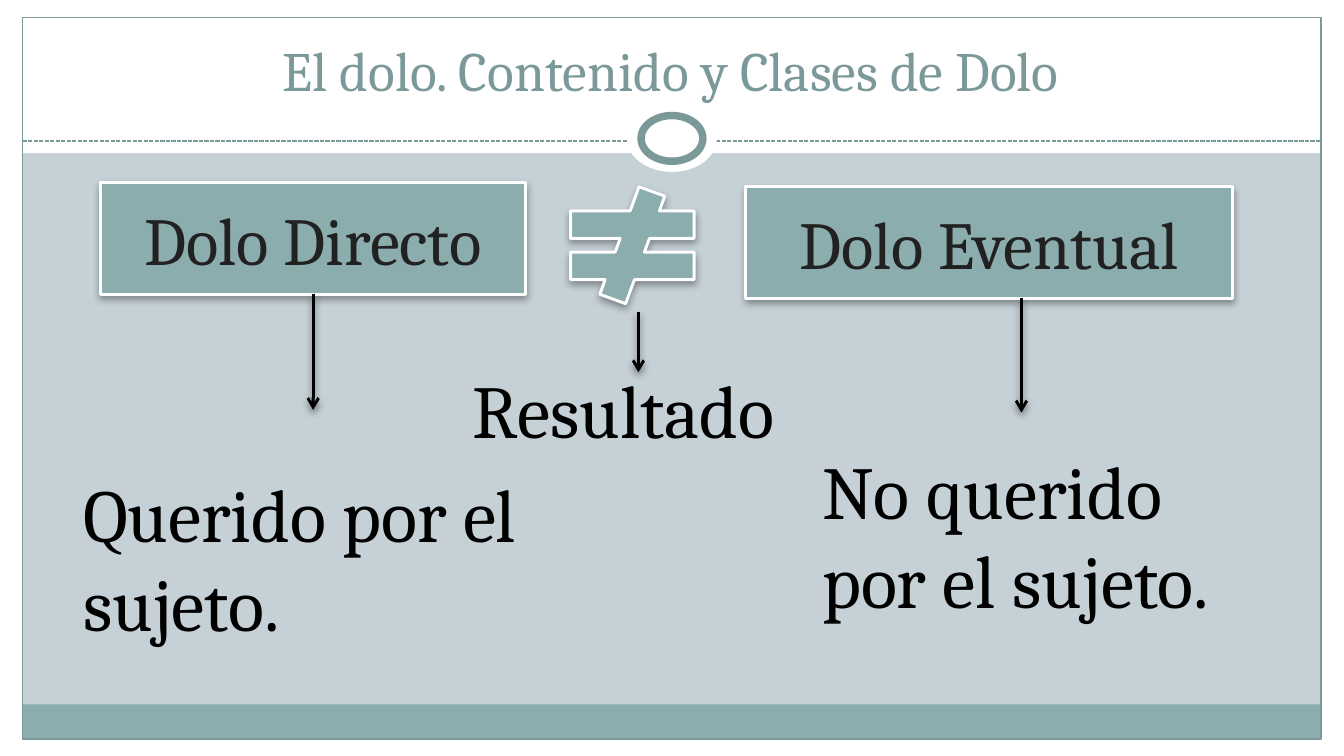
from lxml import etree
from pptx import Presentation
from pptx.dml.color import RGBColor
from pptx.enum import dml, shapes, text
from pptx.oxml import ns
from pptx.util import Inches, Pt

FONT = "Cambria"
WHITE, BLACK, DARK = "FFFFFF", "000000", "212121"
TEAL, SLATE, MIST = "8CADAE", "7C999A", "C5D1D7"
SHAPE = shapes.MSO_SHAPE
PAGE_WIDTH = 10
PAGE_HEIGHT = PAGE_WIDTH * 9 / 16


def paint(color_format, value):
    """Set a fill's or font's colour from a hex string."""
    color_format.rgb = RGBColor.from_string(value)


def set_effects(part, opacity=None):
    """Replace inherited effects, adding a soft drop shadow if opacity is given."""
    effects = etree.SubElement(part._element.spPr, ns.qn("a:effectLst"))
    if opacity:
        shadow = etree.SubElement(effects, ns.qn("a:outerShdw"), blurRad=str(Pt(4)),
                                  dist=str(Pt(2)), dir="5400000", rotWithShape="0")
        tone = etree.SubElement(shadow, ns.qn("a:srgbClr"), val=BLACK)
        etree.SubElement(tone, ns.qn("a:alpha"), val=str(opacity * 1000))


def add_block(slide, kind, box, fill=None, line=None, width=0.75, opacity=None):
    """Add a preset shape at box (left, top, width, height in inches)."""
    block = slide.shapes.add_shape(kind, *map(Inches, box))
    if fill:
        block.fill.solid()
        paint(block.fill.fore_color, fill)
    else:
        block.fill.background()
    if line:
        paint(block.line.color, line)
        block.line.width = Pt(width)
    else:
        block.line.fill.background()
    set_effects(block, opacity)
    return block


def add_line(slide, start, end, color, width):
    """Add a straight connector between two points in inches."""
    line = slide.shapes.add_connector(shapes.MSO_CONNECTOR.STRAIGHT,
                                      *map(Inches, (*start, *end)))
    paint(line.line.color, color)
    line.line.width = Pt(width)
    return line


def write(frame, words, size, color, align):
    """Put one formatted paragraph into a text frame."""
    frame.word_wrap = True
    frame.text = words
    paragraph = frame.paragraphs[0]
    paragraph.alignment = align
    font = paragraph.runs[0].font
    font.name, font.size = FONT, Pt(size)
    paint(font.color, color)


def add_frame(slide, box):
    """Draw the white margins, footer band, border and ring around the page box."""
    left, top, width, height = box
    right, bottom = left + width, top + height
    rule, middle = 1.05, left + width / 2
    for margin in ((0, bottom, PAGE_WIDTH, PAGE_HEIGHT - bottom), (0, 0, PAGE_WIDTH, 1.14),
                   (0, 0, left, PAGE_HEIGHT), (right, 0, PAGE_WIDTH - right, PAGE_HEIGHT)):
        add_block(slide, SHAPE.RECTANGLE, margin, WHITE)
    add_block(slide, SHAPE.RECTANGLE, (left, bottom - 0.26, width, 0.25), TEAL)
    add_block(slide, SHAPE.RECTANGLE, box, line=SLATE)
    divider = add_line(slide, (left, rule), (right, rule), SLATE, 0.75)
    divider.line.dash_style = dml.MSO_LINE.SQUARE_DOT
    set_effects(divider)
    for ring_width, ring_height, line in ((0.67, 0.5, None), (0.46, 0.34, SLATE)):
        ring = (middle - ring_width / 2, 1.03 - ring_height / 2, ring_width, ring_height)
        add_block(slide, SHAPE.OVAL, ring, WHITE, line, 4)


def add_title(slide, box, words):
    """Place the title placeholder in front of the frame."""
    title = slide.shapes.title
    title.left, title.top, title.width, title.height = map(Inches, box)
    write(title.text_frame, words, 29.7, SLATE, text.PP_ALIGN.CENTER)
    title.text_frame.vertical_anchor = text.MSO_ANCHOR.BOTTOM
    slide.shapes._spTree.append(title._element)


def add_concept(slide, kind, box, words=None):
    """Add a shadowed teal shape with an optional heading."""
    concept = add_block(slide, kind, box, TEAL, WHITE, 1.57, 35)
    if words:
        write(concept.text_frame, words, 36, DARK, text.PP_ALIGN.CENTER)
        concept.text_frame.vertical_anchor = text.MSO_ANCHOR.MIDDLE
    return concept


def add_arrow(slide, x, top, length):
    """Add a shadowed arrow pointing down."""
    arrow = add_line(slide, (x, top), (x, top + length), BLACK, 1.57)
    etree.SubElement(arrow.line._get_or_add_ln(), ns.qn("a:tailEnd"), type="arrow")
    set_effects(arrow, 45)
    return arrow


def add_meaning(slide, box, words):
    """Add a plain left-aligned explanation."""
    meaning = slide.shapes.add_textbox(*map(Inches, box))
    write(meaning.text_frame, words, 40, BLACK, text.PP_ALIGN.LEFT)


def add_comparison(slide, box):
    """Lay out both kinds of intent, their difference and meanings in the box."""
    left, top = box[:2]
    add_concept(slide, SHAPE.MATH_NOT_EQUAL, (left + 3.56, top + 0.03, 1.25, 0.87))
    direct = add_concept(slide, SHAPE.RECTANGLE, (left + 0.23, top, 3.16, 0.83), "Dolo Directo")
    add_concept(slide, SHAPE.RECTANGLE, (left + 5.03, top + 0.03, 3.62, 0.83), "Dolo Eventual")
    add_arrow(slide, left + 4.23, top + 0.96, 0.45)
    direct_arrow = add_arrow(slide, left + 1.81, top + 0.84, 0.85)
    direct_arrow.begin_connect(direct, 2)
    add_arrow(slide, left + 7.08, top + 0.86, 0.85)
    add_meaning(slide, (left + 2.9, top + 1.3, 2.9, 0.77), "Resultado")
    add_meaning(slide, (left + 5.5, top + 1.9, 3.56, 1.45), "No querido por el sujeto.")
    add_meaning(slide, (left, top + 2.07, 3.56, 1.45), "Querido por el sujeto.")


def main():
    """Build and save the slide."""
    deck = Presentation()
    deck.slide_width, deck.slide_height = Inches(PAGE_WIDTH), Inches(PAGE_HEIGHT)
    slide = deck.slides.add_slide(deck.slide_layouts[5])
    slide.background.fill.solid()
    paint(slide.background.fill.fore_color, MIST)
    add_frame(slide, (0.17, 0.13, 9.66, 5.37))
    add_title(slide, (0.33, 0.19, 9.33, 0.62), "El dolo. Contenido y Clases de Dolo")
    add_comparison(slide, (0.52, 1.36, 9.06, 3.52))
    deck.save("out.pptx")


if __name__ == "__main__":
    main()
